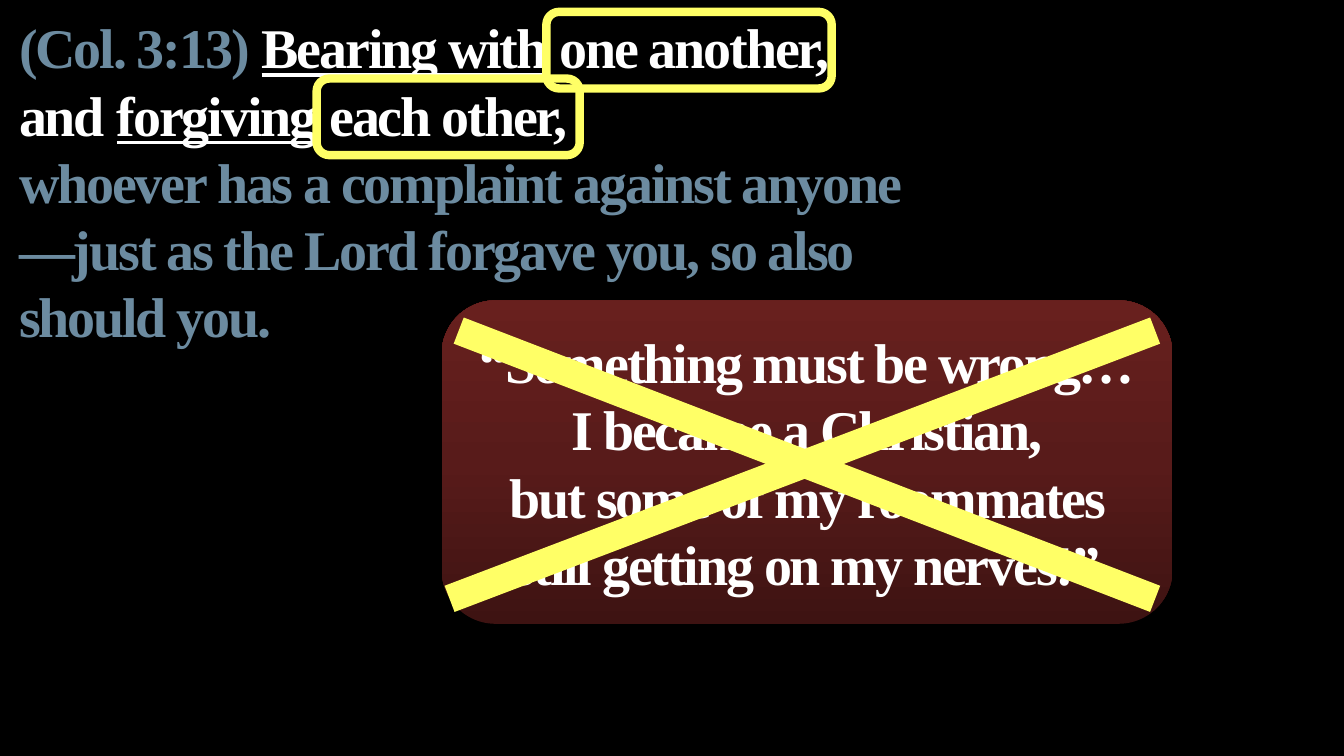
from copy import deepcopy

from pptx import Presentation
from pptx.dml.color import RGBColor
from pptx.enum.shapes import MSO_CONNECTOR, MSO_SHAPE
from pptx.enum.text import MSO_ANCHOR, MSO_AUTO_SIZE, PP_ALIGN
from pptx.oxml.ns import qn
from pptx.util import Cm, Pt

BLACK = RGBColor(0x00, 0x00, 0x00)
WHITE = RGBColor(0xFF, 0xFF, 0xFF)
SLATE = RGBColor(0x6C, 0x8B, 0xA0)
YELLOW = RGBColor(0xFF, 0xFF, 0x66)
CARD_STOPS = [
    (0, RGBColor(0x3E, 0x13, 0x12)),
    (0.5, RGBColor(0x58, 0x1B, 0x1A)),
    (1, RGBColor(0x68, 0x20, 0x1E)),
]


class VerseSlide:
    font_name = "Times New Roman"
    font_size = Pt(40)
    letter_spacing = "-150"

    def __init__(self, presentation):
        self.slide = presentation.slides.add_slide(presentation.slide_layouts[6])
        background = self.slide.background.fill
        background.solid()
        background.fore_color.rgb = BLACK

    def fill_text(self, frame, paragraphs, alignment=PP_ALIGN.LEFT):
        """Fill a frame with paragraphs, each a list of (text, colour, underline)."""
        frame.word_wrap = True
        for index, runs in enumerate(paragraphs):
            paragraph = frame.add_paragraph() if index else frame.paragraphs[0]
            paragraph.alignment = alignment
            paragraph.font.name = self.font_name
            paragraph.font.size = self.font_size
            paragraph.font.bold = True
            for text, colour, underline in runs:
                run = paragraph.add_run()
                run.text = text
                run.font.color.rgb = colour
                run.font.underline = underline
                run._r.get_or_add_rPr().set("spc", self.letter_spacing)

    def text_box(self, left, top, width, height, paragraphs):
        box = self.slide.shapes.add_textbox(Cm(left), Cm(top), Cm(width), Cm(height))
        self.fill_text(box.text_frame, paragraphs)
        box.text_frame.auto_size = MSO_AUTO_SIZE.SHAPE_TO_FIT_TEXT

    def rounded_box(self, left, top, width, height):
        shape = self.slide.shapes.add_shape(
            MSO_SHAPE.ROUNDED_RECTANGLE, Cm(left), Cm(top), Cm(width), Cm(height))
        shape.shadow.inherit = False
        return shape

    def ring(self, left, top, width, height):
        shape = self.rounded_box(left, top, width, height)
        shape.fill.background()
        shape.line.color.rgb = YELLOW
        shape.line.width = Pt(6)

    def card(self, left, top, width, height, lines):
        shape = self.rounded_box(left, top, width, height)
        shape.line.fill.background()
        shape.fill.gradient()
        shape.fill.gradient_angle = 90
        stop_list = shape._element.spPr.find(".//" + qn("a:gsLst"))
        stop_list.append(deepcopy(stop_list[0]))
        for stop, (position, colour) in zip(shape.fill.gradient_stops, CARD_STOPS):
            stop.position = position
            stop.color.rgb = colour
        shape.text_frame.vertical_anchor = MSO_ANCHOR.MIDDLE
        paragraphs = [[(line, WHITE, False)] for line in lines]
        self.fill_text(shape.text_frame, paragraphs, PP_ALIGN.CENTER)

    def strike(self, start_x, start_y, end_x, end_y):
        line = self.slide.shapes.add_connector(
            MSO_CONNECTOR.STRAIGHT, Cm(start_x), Cm(start_y), Cm(end_x), Cm(end_y))
        line.line.color.rgb = YELLOW
        line.line.width = Pt(20)
        properties = line._element.spPr
        properties.append(properties.makeelement(qn("a:effectLst"), {}))


def main():
    presentation = Presentation()
    presentation.slide_width = Cm(33.87)
    presentation.slide_height = Cm(19.05)
    verse = VerseSlide(presentation)

    verse.text_box(0.23, 0.2, 22.91, 8.81, [
        [
            ("(Col. 3:13) ", SLATE, False),
            ("Bearing with", WHITE, True),
            (" one another, and ", WHITE, False),
            ("forgiving", WHITE, True),
            (" each other,", WHITE, False),
        ],
        [("whoever has a complaint against anyone—just as the Lord forgave you, "
          "so also should you.", SLATE, False)],
    ])
    verse.ring(13.77, 0.3, 7.19, 1.93)
    verse.ring(7.98, 1.98, 6.63, 1.93)
    verse.card(11.13, 7.57, 18.42, 8.15, [
        "“Something must be wrong…",
        "I became a Christian,",
        "but some of my roommates still getting on my nerves!”",
    ])
    verse.strike(11.56, 8.33, 29.11, 15.09)
    verse.strike(11.33, 15.09, 29.11, 8.33)
    presentation.save("out.pptx")


if __name__ == "__main__":
    main()
